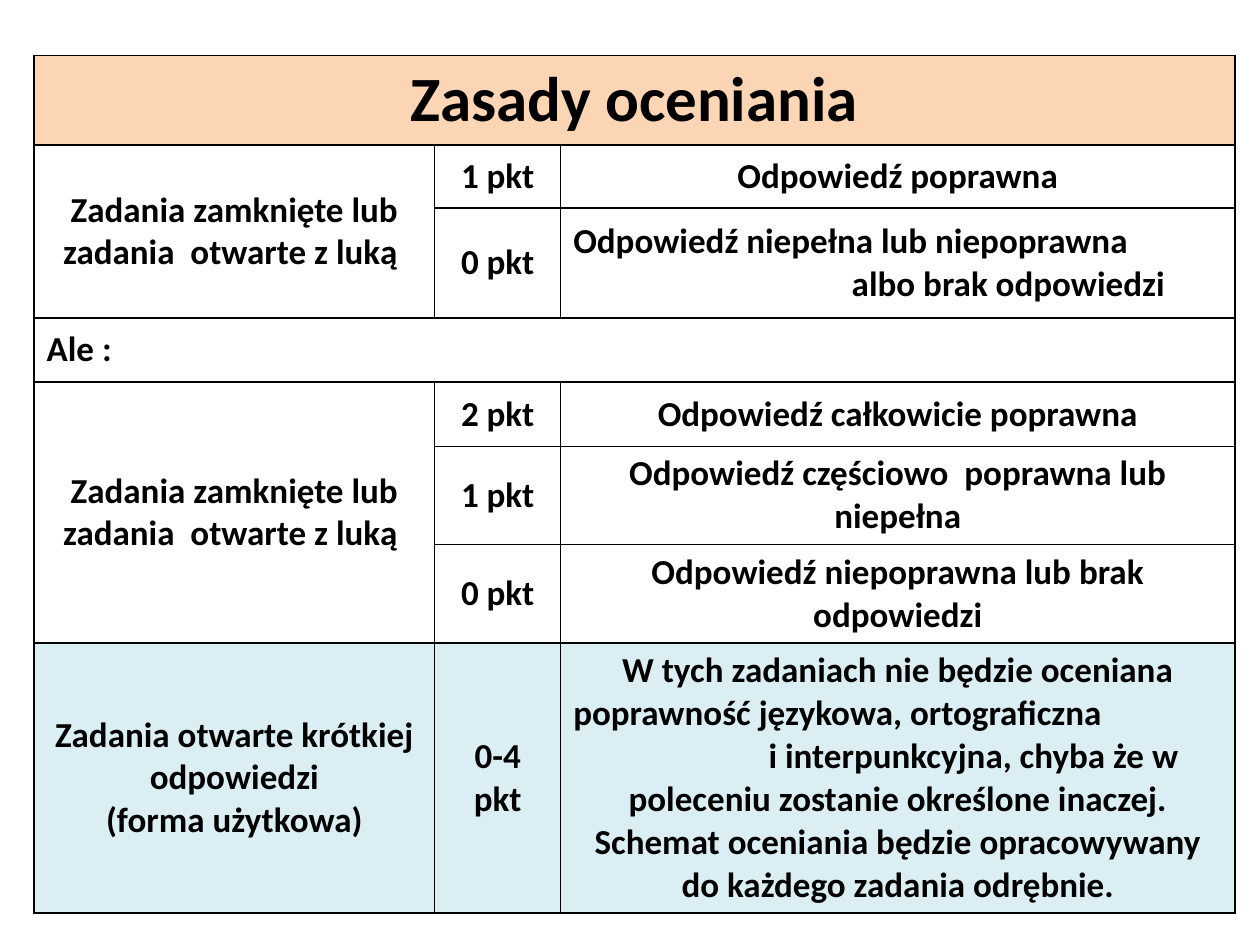
from lxml.etree import SubElement as Sub
from pptx import Presentation
from pptx.dml.color import RGBColor
from pptx.enum.text import MSO_ANCHOR as Anchor, PP_ALIGN as Align
from pptx.oxml.ns import qn
from pptx.util import Inches, Pt

WIDTHS = [3.18, 1, 5.35]
HEIGHTS = [0.71, 0.5, 0.87, 0.51, 0.51, 0.78, 0.78, 2.14]
PEACH, WHITE, BLUE = "FCD5B5", "FFFFFF", "DBEEF4"
FILLS = [PEACH] + [WHITE] * 6 + [BLUE]
SPANS = [(0, 0, 0, 2), (1, 0, 2, 0), (3, 0, 3, 2), (4, 0, 6, 0)]
TASK = "Zadania zamknięte lub zadania  otwarte z luką "
ROWS = [
    ["Zasady oceniania", "", ""],
    [TASK, "1 pkt", "Odpowiedź poprawna"],
    ["", "0 pkt", "Odpowiedź niepełna lub niepoprawna\nalbo brak odpowiedzi"],
    ["Ale :", "", ""],
    [TASK, "2 pkt", "Odpowiedź całkowicie poprawna"],
    ["", "1 pkt", "Odpowiedź częściowo  poprawna lub niepełna"],
    ["", "0 pkt", "Odpowiedź niepoprawna lub brak odpowiedzi"],
    ["Zadania otwarte krótkiej odpowiedzi\n(forma użytkowa)", "0-4 pkt",
     "W tych zadaniach nie będzie oceniana\n"
     "poprawność językowa, ortograficzna\n"
     "i interpunkcyjna, chyba że w\n"
     "poleceniu zostanie określone inaczej. "
     "Schemat oceniania będzie opracowywany do każdego zadania odrębnie."],
]
LEFT = {(2, 2, 0): 0, (2, 2, 1): 2.21, (3, 0, 0): 0,
        (7, 2, 1): 0, (7, 2, 2): 1.55}


def color(code):
    return RGBColor.from_string(code)


def border(cell):
    props = cell._tc.get_or_add_tcPr()
    for side in ("lnL", "lnR", "lnT", "lnB"):
        line = Sub(props, qn("a:" + side), w=str(Pt(1)))
        fill = Sub(line, qn("a:solidFill"))
        Sub(fill, qn("a:srgbClr"), val="000000")


def fill_cell(cell, row, col):
    border(cell)
    cell.fill.solid()
    cell.fill.fore_color.rgb = color(FILLS[row])
    cell.vertical_anchor = Anchor.MIDDLE if row else Anchor.TOP
    cell.text_frame.text = ROWS[row][col]
    for num, para in enumerate(cell.text_frame.paragraphs):
        indent = LEFT.get((row, col, num))
        para.alignment = Align.CENTER if indent is None else Align.LEFT
        if indent:
            para._p.get_or_add_pPr().set("marL", str(Inches(indent)))
        for font in [para.font] + [run.font for run in para.runs]:
            font.name = "Calibri"
            font.size = Pt(20 if row else 36)
            font.bold = True
            font.color.rgb = color("000000")


def add_rules(slide, left, top, width, height):
    frame = slide.shapes.add_table(len(HEIGHTS), len(WIDTHS), Inches(left),
                                   Inches(top), Inches(width), Inches(height))
    table = frame.table
    table.first_row = table.horz_banding = False
    for col, size in zip(table.columns, WIDTHS):
        col.width = Inches(size * width / sum(WIDTHS))
    for row, size in zip(table.rows, HEIGHTS):
        row.height = Inches(size * height / sum(HEIGHTS))
    for row in range(len(HEIGHTS)):
        for col in range(len(WIDTHS)):
            fill_cell(table.cell(row, col), row, col)
    for top_row, first, end_row, last in SPANS:
        table.cell(top_row, first).merge(table.cell(end_row, last))


def main():
    deck = Presentation()
    deck.slide_width, deck.slide_height = Inches(10), Inches(7.5)
    slide = deck.slides.add_slide(deck.slide_layouts[6])
    add_rules(slide, 0.27, 0.44, sum(WIDTHS), sum(HEIGHTS))
    deck.save("out.pptx")


if __name__ == "__main__":
    main()
